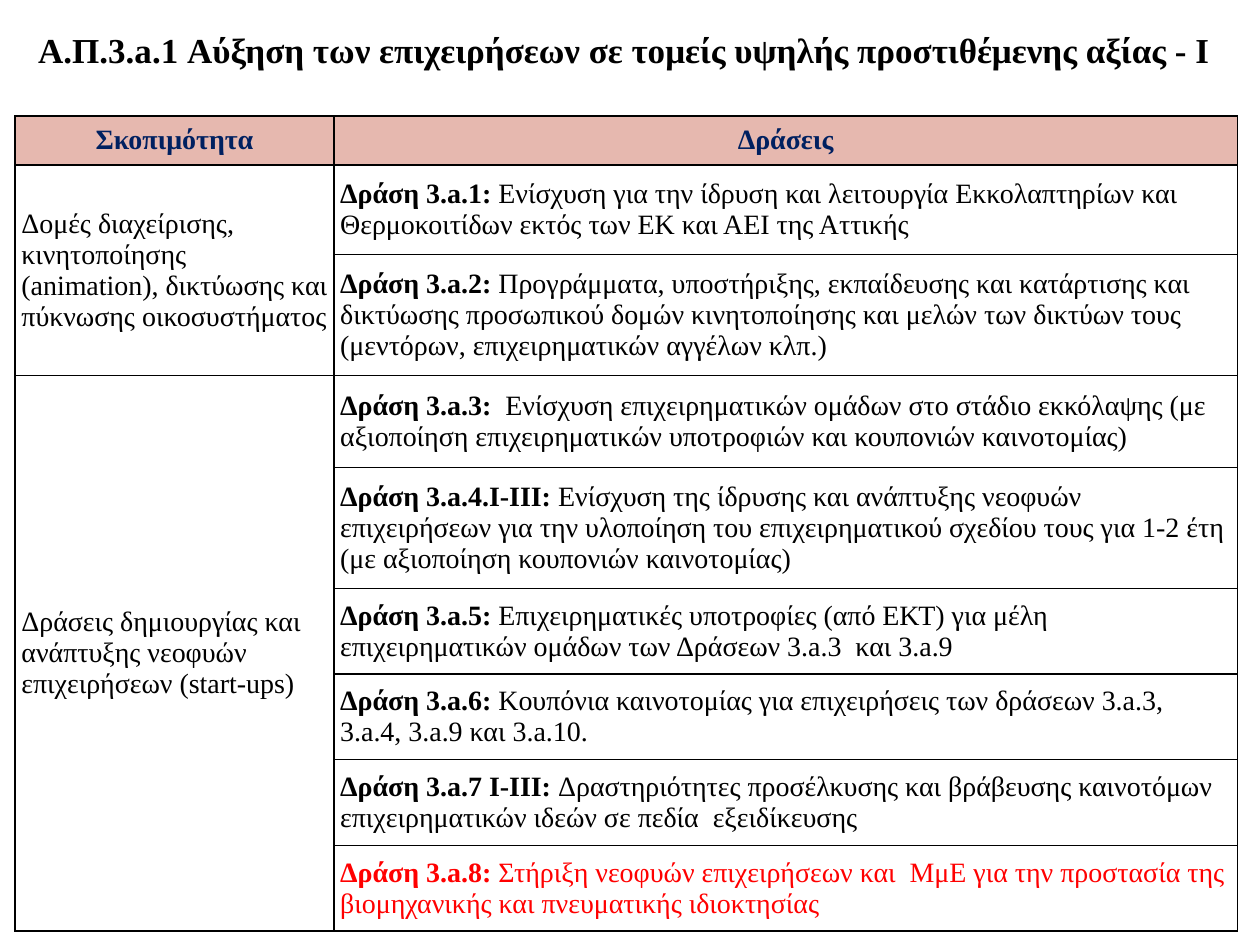
from lxml import etree
from pptx import Presentation
from pptx.dml.color import RGBColor
from pptx.enum.text import MSO_ANCHOR, MSO_AUTO_SIZE, PP_ALIGN
from pptx.oxml.ns import qn
from pptx.util import Inches, Pt

CENTER, LEFT = PP_ALIGN.CENTER, PP_ALIGN.LEFT
MIDDLE = MSO_ANCHOR.MIDDLE
NO_AUTOFIT = MSO_AUTO_SIZE.NONE
TITLE_ONLY = 5

COLORS = {
    "text": "000000",
    "header_text": "002060",
    "header_fill": "E6B8AF",
    "highlight": "FF0000",
    "paper": "FFFFFF",
    "border": "000000",
}

TITLE = "Α.Π.3.a.1 Αύξηση των επιχειρήσεων σε τομείς υψηλής προστιθέμενης αξίας - Ι"
HEADERS = ["Σκοπιμότητα", "Δράσεις"]
# Each purpose with its actions: (label, description, colour)
PURPOSES = [
    ("Δομές διαχείρισης, κινητοποίησης (animation), δικτύωσης και πύκνωσης οικοσυστήματος", [
        ("Δράση 3.a.1:", " Ενίσχυση για την ίδρυση και λειτουργία Εκκολαπτηρίων και "
         " Θερμοκοιτίδων εκτός των ΕΚ και ΑΕΙ της Αττικής", "text"),
        ("Δράση 3.a.2: ", "Προγράμματα, υποστήριξης, εκπαίδευσης και κατάρτισης και "
         "δικτύωσης προσωπικού δομών κινητοποίησης και μελών των δικτύων τους "
         "(μεντόρων, επιχειρηματικών αγγέλων κλπ.)", "text"),
    ]),
    ("Δράσεις δημιουργίας και ανάπτυξης νεοφυών επιχειρήσεων (start-ups)", [
        ("Δράση 3.a.3:  ", "Ενίσχυση επιχειρηματικών ομάδων στο στάδιο εκκόλαψης "
         "(με αξιοποίηση επιχειρηματικών υποτροφιών και κουπονιών καινοτομίας)", "text"),
        ("Δράση 3.a.4.Ι-ΙΙΙ: ", "Ενίσχυση της ίδρυσης και ανάπτυξης νεοφυών επιχειρήσεων "
         "για την υλοποίηση του επιχειρηματικού σχεδίου τους για 1-2 έτη "
         "(με αξιοποίηση κουπονιών καινοτομίας)", "text"),
        ("Δράση 3.a.5:", " Επιχειρηματικές υποτροφίες (από ΕΚΤ) για μέλη "
         "επιχειρηματικών ομάδων των Δράσεων 3.a.3  και 3.a.9", "text"),
        ("Δράση 3.a.6:", " Κουπόνια καινοτομίας για επιχειρήσεις των δράσεων "
         "3.a.3, 3.a.4, 3.a.9 και 3.a.10.", "text"),
        ("Δράση 3.a.7 Ι-ΙΙΙ: ", "Δραστηριότητες προσέλκυσης και βράβευσης καινοτόμων "
         "επιχειρηματικών ιδεών σε πεδία  εξειδίκευσης", "text"),
        ("Δράση 3.a.8: ", "Στήριξη νεοφυών επιχειρήσεων και  ΜμΕ για την προστασία "
         "της βιομηχανικής και πνευματικής ιδιοκτησίας", "highlight"),
    ]),
]
COLUMN_WIDTHS = [2.53, 7.17]
ROW_HEIGHTS = [0.39, 0.71, 0.96, 0.73, 0.96, 0.68, 0.68, 0.68, 0.68]


class SlideBuilder:
    font = "Times New Roman"
    title_size = Pt(20)
    table_size = Pt(16)
    cell_margin = Inches(0.05)
    border_width = Pt(1)

    def __init__(self, slide):
        self.slide = slide

    def format_run(self, run, size, color, bold):
        run.font.name = self.font
        run.font.size = size
        run.font.bold = bold
        run.font.color.rgb = RGBColor.from_string(COLORS[color])

    def title(self, text, left, top, width, height):
        title = self.slide.shapes.title
        title.left, title.top = Inches(left), Inches(top)
        title.width, title.height = Inches(width), Inches(height)
        frame = title.text_frame
        frame.text = text
        frame.word_wrap = True
        frame.auto_size = NO_AUTOFIT
        frame.vertical_anchor = MIDDLE
        paragraph = frame.paragraphs[0]
        paragraph.alignment = CENTER
        self.format_run(paragraph.runs[0], self.title_size, "text", True)

    def table(self, left, top, column_widths, row_heights):
        table = self.slide.shapes.add_table(
            len(row_heights), len(column_widths), Inches(left), Inches(top),
            Inches(sum(column_widths)), Inches(sum(row_heights))).table
        table.first_row = table.horz_banding = False
        for column, width in zip(table.columns, column_widths):
            column.width = Inches(width)
        for row, height in zip(table.rows, row_heights):
            row.height = Inches(height)
        for cell in table.iter_cells():
            self.borders(cell)
        return table

    def borders(self, cell):
        properties = cell._tc.get_or_add_tcPr()
        for side in ("a:lnL", "a:lnR", "a:lnT", "a:lnB"):
            line = etree.SubElement(properties, qn(side), w=str(self.border_width))
            fill = etree.SubElement(line, qn("a:solidFill"))
            etree.SubElement(fill, qn("a:srgbClr"), val=COLORS["border"])

    def cell(self, cell, parts, color="text", fill="paper", align=LEFT):
        """Fill a cell with parts, each a (text, bold) pair."""
        cell.margin_left = cell.margin_right = self.cell_margin
        cell.margin_top = cell.margin_bottom = self.cell_margin
        cell.vertical_anchor = MIDDLE
        cell.fill.solid()
        cell.fill.fore_color.rgb = RGBColor.from_string(COLORS[fill])
        paragraph = cell.text_frame.paragraphs[0]
        paragraph.alignment = align
        for text, bold in parts:
            run = paragraph.add_run()
            run.text = text
            self.format_run(run, self.table_size, color, bold)


def main():
    presentation = Presentation()
    presentation.slide_width, presentation.slide_height = Inches(10), Inches(7.5)
    layout = presentation.slide_layouts[TITLE_ONLY]
    builder = SlideBuilder(presentation.slides.add_slide(layout))

    builder.title(TITLE, 0.08, 0.17, 9.75, 0.44)
    table = builder.table(0.12, 0.92, COLUMN_WIDTHS, ROW_HEIGHTS)
    for column, header in enumerate(HEADERS):
        builder.cell(table.cell(0, column), [(header, True)],
                     "header_text", "header_fill", CENTER)

    first_row = 1
    for purpose, actions in PURPOSES:
        purpose_cell = table.cell(first_row, 0)
        purpose_cell.merge(table.cell(first_row + len(actions) - 1, 0))
        builder.cell(purpose_cell, [(purpose, False)])
        for row, (label, description, color) in enumerate(actions, first_row):
            builder.cell(table.cell(row, 1), [(label, True), (description, False)], color)
        first_row += len(actions)

    presentation.save("out.pptx")


if __name__ == "__main__":
    main()
